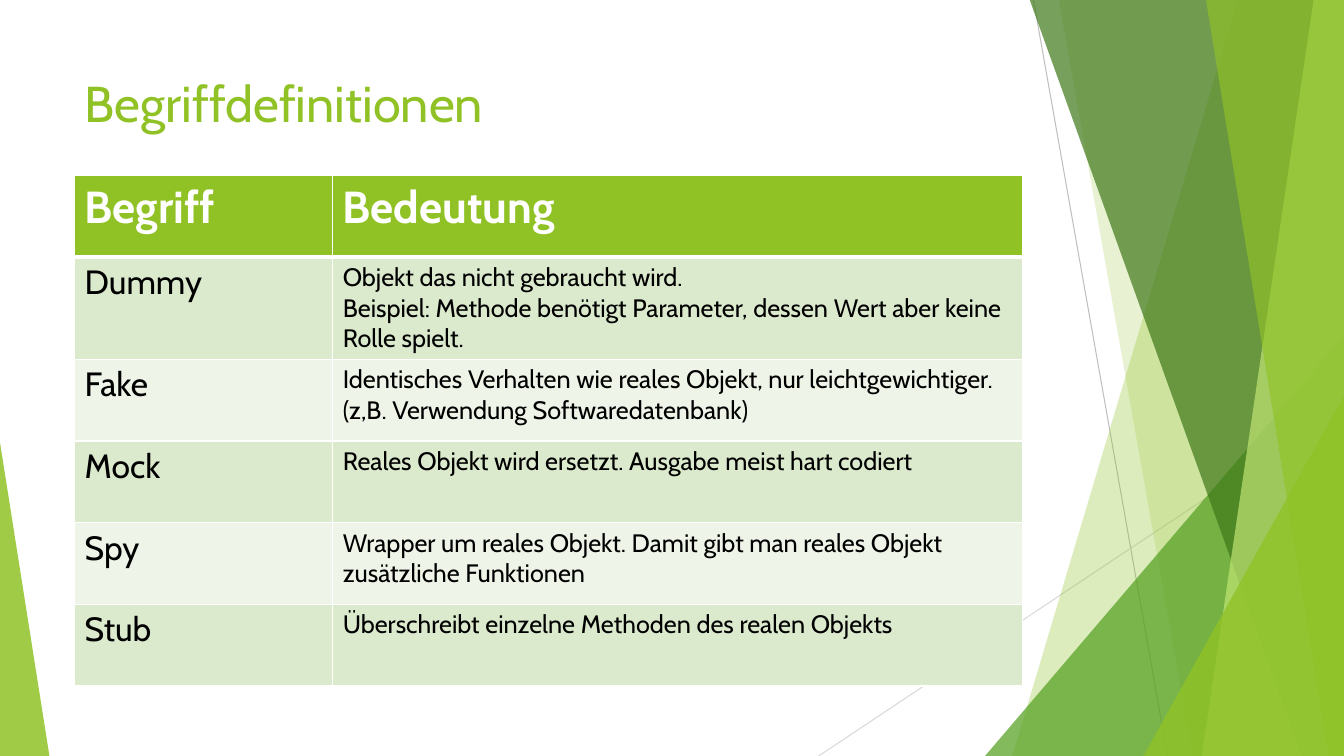
"""Builds the slide "Begriffdefinitionen": a glossary table beside green facets."""
from dataclasses import dataclass

from lxml.etree import SubElement
from pptx import Presentation
from pptx.dml.color import RGBColor
from pptx.enum.shapes import MSO_CONNECTOR, MSO_SHAPE
from pptx.enum.text import MSO_ANCHOR, PP_ALIGN
from pptx.oxml.ns import qn
from pptx.util import Inches, Pt


@dataclass(frozen=True)
class Theme:
    font: str = "Cabin"
    green: str = "90C226"
    leaf: str = "54A021"
    forest: str = "3F7819"
    lime: str = "C0E474"
    band_dark: str = "DBE9CD"
    band_light: str = "EEF4E8"
    white: str = "FFFFFF"
    black: str = "000000"
    ray_dark: str = "BFBFBF"
    ray_light: str = "D9D9D9"
    title_size: int = 36
    header_size: int = 32
    term_size: int = 24
    meaning_size: int = 18


def style_text(frame, size, color, bold=False):
    for paragraph in frame.paragraphs:
        paragraph.alignment = PP_ALIGN.LEFT
        for run in paragraph.runs:
            run.font.name = theme.font
            run.font.size = Pt(size)
            run.font.bold = bold
            run.font.color.rgb = RGBColor.from_string(color)


def add_border(cell, side, width):
    border = SubElement(cell._tc.get_or_add_tcPr(), qn(f"a:ln{side}"), w=str(Pt(width)))
    SubElement(SubElement(border, qn("a:solidFill")), qn("a:srgbClr"), val=theme.white)


theme = Theme()
WIDTH, HEIGHT = 13.33, 7.5
MARGIN, CONTENT_WIDTH = 0.74, 9.4

presentation = Presentation()
presentation.slide_width = Inches(WIDTH)
presentation.slide_height = Inches(HEIGHT)
slide = presentation.slides.add_slide(presentation.slide_layouts[5])
shapes = slide.shapes

rays = [
    (10.25, 0, 11.58, HEIGHT, theme.ray_dark),
    (WIDTH, 4.03, 8.12, HEIGHT, theme.ray_light),
]
for x1, y1, x2, y2, color in rays:
    ray = shapes.add_connector(
        MSO_CONNECTOR.STRAIGHT, Inches(x1), Inches(y1), Inches(x2), Inches(y2)
    )
    ray.line.color.rgb = RGBColor.from_string(color)
    ray.line.width = Pt(0.75)
    SubElement(ray._element.spPr, qn("a:effectLst"))

# Wedge: (top x, bottom x). Triangle: (left, top, width, apex).
facets = [
    ((12.28, 10.04), theme.green, 30),
    ((10.5, 11.83), theme.green, 20),
    ((9.77, 3.33, 3.56, 1), theme.leaf, 72),
    ((10.21, 12.91), theme.forest, 70),
    ((13.03, 11.92), theme.lime, 70),
    ((11.96, 13.18), theme.green, 65),
    ((11.34, 3.93, 1.99, 1), theme.green, 80),
    ((0, 4.39, 0.49, 0), theme.green, 85),
]
for outline, color, opacity in facets:
    if len(outline) == 2:
        top_x, bottom_x = outline
        wedge_top = Inches(-0.01)
        wedge = shapes.build_freeform(Inches(top_x), wedge_top)
        wedge.add_line_segments([
            (Inches(WIDTH), wedge_top),
            (Inches(WIDTH), Inches(HEIGHT)),
            (Inches(bottom_x), Inches(HEIGHT)),
        ])
        facet = wedge.convert_to_shape()
    else:
        left, top, width, apex = outline
        facet = shapes.add_shape(
            MSO_SHAPE.ISOSCELES_TRIANGLE,
            Inches(left), Inches(top), Inches(width), Inches(HEIGHT - top),
        )
        facet.adjustments[0] = apex
    facet.shadow.inherit = False
    facet.line.fill.background()
    facet.fill.solid()
    facet.fill.fore_color.rgb = RGBColor.from_string(color)
    fill_color = facet._element.spPr.find(qn("a:solidFill"))[0]
    SubElement(fill_color, qn("a:alpha"), val=str(opacity * 1000))

title = shapes.title
title.left, title.top = Inches(MARGIN), Inches(0.67)
title.width, title.height = Inches(CONTENT_WIDTH), Inches(1.44)
title.text_frame.text = "Begriffdefinitionen"
title.text_frame.vertical_anchor = MSO_ANCHOR.TOP
style_text(title.text_frame, theme.title_size, theme.green)

glossary = [
    ("Begriff", "Bedeutung"),
    ("Dummy", "Objekt das nicht gebraucht wird.\n"
              "Beispiel: Methode benötigt Parameter, dessen Wert aber keine Rolle spielt."),
    ("Fake", "Identisches Verhalten wie reales Objekt, nur leichtgewichtiger. "
             "(z,B. Verwendung Softwaredatenbank)"),
    ("Mock", "Reales Objekt wird ersetzt. Ausgabe meist hart codiert"),
    ("Spy", "Wrapper um reales Objekt. Damit gibt man reales Objekt zusätzliche Funktionen"),
    ("Stub", "Überschreibt einzelne Methoden des realen Objekts"),
]
ROW_HEIGHT = 0.81
table = shapes.add_table(
    len(glossary), 2, Inches(MARGIN), Inches(1.74),
    Inches(CONTENT_WIDTH), Inches(ROW_HEIGHT * len(glossary)),
).table
for column, width in zip(table.columns, (2.56, 6.84)):
    column.width = Inches(width)

for row, entry in enumerate(glossary):
    table.rows[row].height = Inches(ROW_HEIGHT)
    for column, (wording, size) in enumerate(zip(entry, (theme.term_size, theme.meaning_size))):
        cell = table.cell(row, column)
        cell.text_frame.text = wording
        if row == 0:
            background = theme.green
            style_text(cell.text_frame, theme.header_size, theme.white, bold=True)
        else:
            background = theme.band_dark if row % 2 else theme.band_light
            style_text(cell.text_frame, size, theme.black)
        for side in "LRTB":
            at_header_edge = (row, side) in ((0, "B"), (1, "T"))
            add_border(cell, side, 3 if at_header_edge else 1)
        cell.fill.solid()
        cell.fill.fore_color.rgb = RGBColor.from_string(background)

presentation.save("out.pptx")
